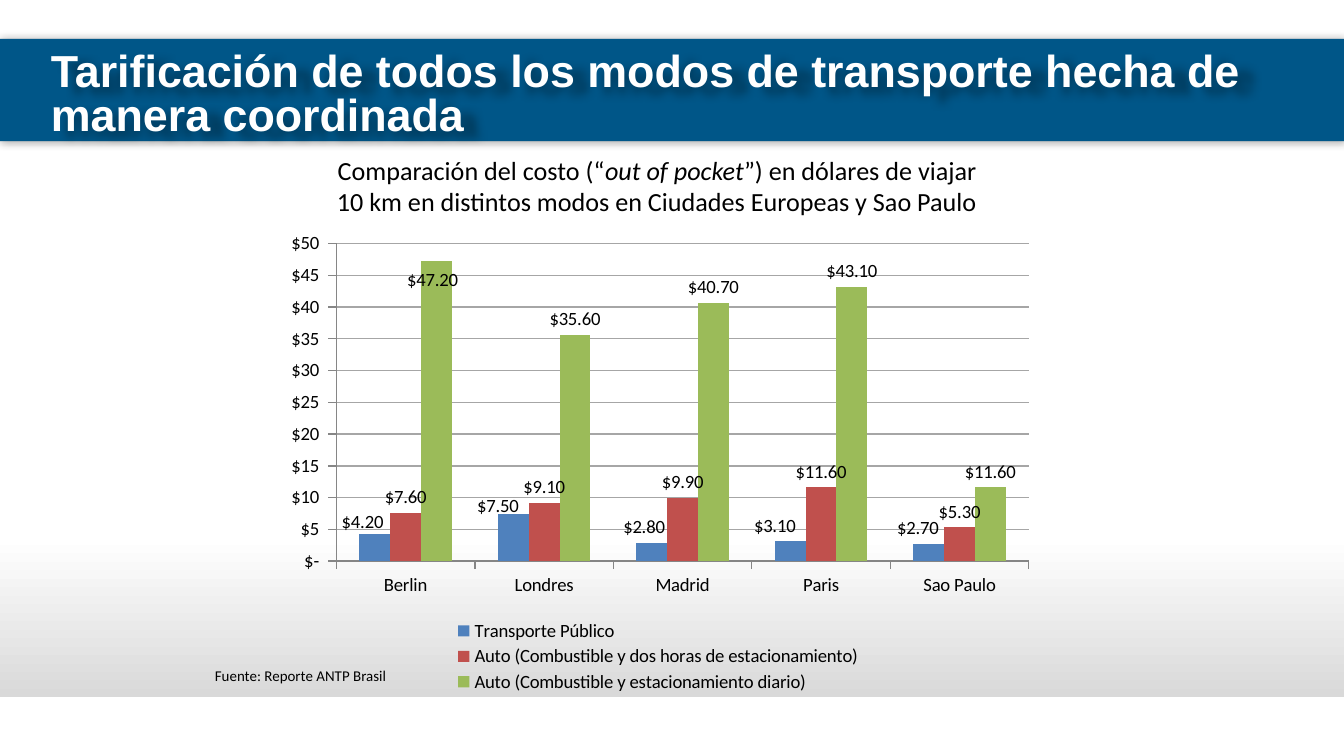
from lxml import etree
from pptx import Presentation
from pptx.chart.data import CategoryChartData
from pptx.dml.color import RGBColor
from pptx.enum.chart import XL_CHART_TYPE, XL_LABEL_POSITION, XL_LEGEND_POSITION, XL_TICK_MARK
from pptx.enum.shapes import MSO_SHAPE
from pptx.enum.text import PP_ALIGN
from pptx.oxml import parse_xml
from pptx.oxml.ns import nsdecls, qn
from pptx.util import Inches, Pt

RECT = MSO_SHAPE.RECTANGLE
COLUMNS = XL_CHART_TYPE.COLUMN_CLUSTERED
OUTSIDE_END = XL_LABEL_POSITION.OUTSIDE_END
BOTTOM = XL_LEGEND_POSITION.BOTTOM
TICK_OUT = XL_TICK_MARK.OUTSIDE
LEFT, CENTER = PP_ALIGN.LEFT, PP_ALIGN.CENTER

WHITE = RGBColor(0xFF, 0xFF, 0xFF)
BLACK = RGBColor(0, 0, 0)
NAVY = RGBColor(0x00, 0x56, 0x88)
PALE_GRAY = RGBColor(0xD9, 0xD9, 0xD9)
GRID_GRAY = RGBColor(0xA6, 0xA6, 0xA6)
AXIS_GRAY = RGBColor(0x86, 0x86, 0x86)
BLUE = RGBColor(0x4F, 0x81, 0xBD)
RED = RGBColor(0xC0, 0x50, 0x4D)
GREEN = RGBColor(0x9B, 0xBB, 0x59)

AXIS_FORMAT = '_ [$$-409]* #,##0_ ;_ [$$-409]* \\-#,##0_ ;_ [$$-409]* "-"_ ;_ @_ '
LABEL_FORMAT = ('_-[$$-409]* #,##0.00_ ;_-[$$-409]* \\-#,##0.00\\ ;'
                '_-[$$-409]* "-"??_ ;_-@_ ')

CITIES = ["Berlin", "Londres", "Madrid", "Paris", "Sao Paulo"]
# Name, values, colour, label offsets by point (percent of the chart)
COSTS = [
    ("Transporte Público", (4.2, 7.5, 2.8, 3.1, 2.7), BLUE,
     {0: (-1.6, 0.8), 1: (-2, 1.8), 2: (-1, 0), 3: (-2, 0), 4: (-1.4, 0.1)}),
    ("Auto (Combustible y dos horas de estacionamiento)",
     (7.6, 9.1, 9.9, 11.6, 5.3), RED, {}),
    ("Auto (Combustible y estacionamiento diario)",
     (47.2, 35.6, 40.7, 43.1, 11.6), GREEN, {0: (-0.5, 7.2)}),
]


def shadow(blur, dist, angle):
    """Soft black outer shadow; blur and distance in points."""
    return parse_xml(
        f'<a:effectLst {nsdecls("a")}><a:outerShdw blurRad="{Pt(blur)}" '
        f'dist="{Pt(dist)}" dir="{angle * 60000}" algn="ctr" rotWithShape="0">'
        '<a:srgbClr val="000000"><a:alpha val="40000"/></a:srgbClr>'
        '</a:outerShdw></a:effectLst>')


def layout(modes=(), **percents):
    """Manual chart layout from percentages of the chart area."""
    root = etree.Element(qn("c:layout"))
    manual = etree.SubElement(root, qn("c:manualLayout"))
    for tag, value in modes:
        etree.SubElement(manual, qn(f"c:{tag}")).set("val", value)
    for tag, value in percents.items():
        etree.SubElement(manual, qn(f"c:{tag}")).set("val", f"{value / 100:.4f}")
    return root


EDGES = (("xMode", "edge"), ("yMode", "edge"))
INNER = (("layoutTarget", "inner"),) + EDGES


class SlideBuilder:
    body_font = "Calibri"
    title_font = "Arial"

    def __init__(self, slide):
        self.s = slide

    def band(self, y, h):
        sp = self.s.shapes.add_shape(RECT, 0, Inches(y), Inches(10), Inches(h))
        sp.shadow.inherit = False
        sp.line.fill.background()
        return sp

    def text(self, box, runs, size, color=BLACK, font=body_font, bold=False,
             align=LEFT, wrap=True, spacing=None):
        sp = self.s.shapes.add_textbox(*map(Inches, box))
        tf = sp.text_frame
        tf.word_wrap = wrap
        p = tf.paragraphs[0]
        p.alignment = align
        p.line_spacing = spacing
        for words, italic in runs:
            r = p.add_run()
            r.text = words
            r.font.size, r.font.name = Pt(size), font
            r.font.bold, r.font.italic = bold, italic
            r.font.color.rgb = color
        return sp

    def axis(self, axis):
        axis.major_tick_mark = TICK_OUT
        axis.format.line.color.rgb = AXIS_GRAY
        axis.format.line.width = Pt(0.75)

    def chart(self, box, categories, costs):
        data = CategoryChartData()
        data.categories = categories
        for name, values, _, _ in costs:
            data.add_series(name, values)
        chart = self.s.shapes.add_chart(COLUMNS, *map(Inches, box), data).chart
        chart.has_title = False
        chart.font.size, chart.font.name = Pt(10), self.body_font
        chart.font.color.rgb = BLACK

        # Axes
        self.axis(chart.category_axis)
        axis = chart.value_axis
        self.axis(axis)
        axis.minimum_scale, axis.maximum_scale, axis.major_unit = 0, 50, 5
        axis.tick_labels.number_format = AXIS_FORMAT
        axis.tick_labels.number_format_is_linked = False
        axis.has_major_gridlines = True
        axis.major_gridlines.format.line.color.rgb = GRID_GRAY
        axis.major_gridlines.format.line.width = Pt(0.75)

        # Columns and their labels
        plot = chart.plots[0]
        plot.gap_width, plot.overlap = 150, 0
        plot.vary_by_categories = False
        for series, (_, _, color, offsets) in zip(plot.series, costs):
            series.format.fill.solid()
            series.format.fill.fore_color.rgb = color
            labels = series.data_labels
            labels.show_value = True
            labels.number_format = LABEL_FORMAT
            labels.number_format_is_linked = False
            labels.position = OUTSIDE_END
            for i, (x, y) in offsets.items():
                series.points[i].data_label.position = OUTSIDE_END
                idx = series._element.xpath(f"c:dLbls/c:dLbl/c:idx[@val={i}]")[0]
                idx.addnext(layout(x=x, y=y))

        # Legend and plot area
        chart.has_legend = True
        chart.legend.position = BOTTOM
        chart.legend.include_in_layout = False
        legend = chart.legend._element
        area = chart._chartSpace.chart.plotArea
        for parent in (legend, area):
            for old in parent.findall(qn("c:layout")):
                parent.remove(old)
        legend.find(qn("c:legendPos")).addnext(
            layout(EDGES, x=23.5, y=82.6, w=53, h=17))
        area.insert(0, layout(INNER, x=8.4, y=4.3, w=89.6, h=66.8))


def main():
    prs = Presentation()
    prs.slide_width = Inches(10)
    prs.slide_height = prs.slide_width * 9 // 16
    b = SlideBuilder(prs.slides.add_slide(prs.slide_layouts[6]))

    # Background bands
    fade = b.band(3.99, 1.2).fill
    fade.gradient()
    fade.gradient_angle = 90
    for i, color in enumerate((PALE_GRAY, WHITE)):
        fade.gradient_stops[i].color.rgb = color
        fade.gradient_stops[i].position = i
    header = b.band(0.29, 0.76)
    header.fill.solid()
    header.fill.fore_color.rgb = NAVY
    sp_pr = header._element.spPr
    sp_pr.replace(sp_pr.find(qn("a:effectLst")), shadow(5, 0, 0))

    # Chart with its heading
    b.chart((2.02, 1.66, 5.75, 3.54), CITIES, COSTS)
    b.text((2.38, 1.1, 5.02, 0.57),
           [("Comparación del costo (“", False), ("out of pocket", True),
            ("”) en dólares de viajar 10 km en distintos modos en Ciudades "
             "Europeas y Sao Paulo", False)], 14, align=CENTER)

    # Title and source
    title = b.text((0.28, 0.35, 9.45, 0.67),
                   [("Tarificación de todos los modos de transporte hecha de "
                     "manera coordinada", False)],
                   24, WHITE, b.title_font, bold=True, spacing=0.8)
    title._element.spPr.append(shadow(5, 8, 20))
    b.text((1.5, 4.91, 1.49, 0.24), [("Fuente: Reporte ANTP Brasil", False)],
           8, wrap=False)

    prs.save("out.pptx")


if __name__ == "__main__":
    main()
